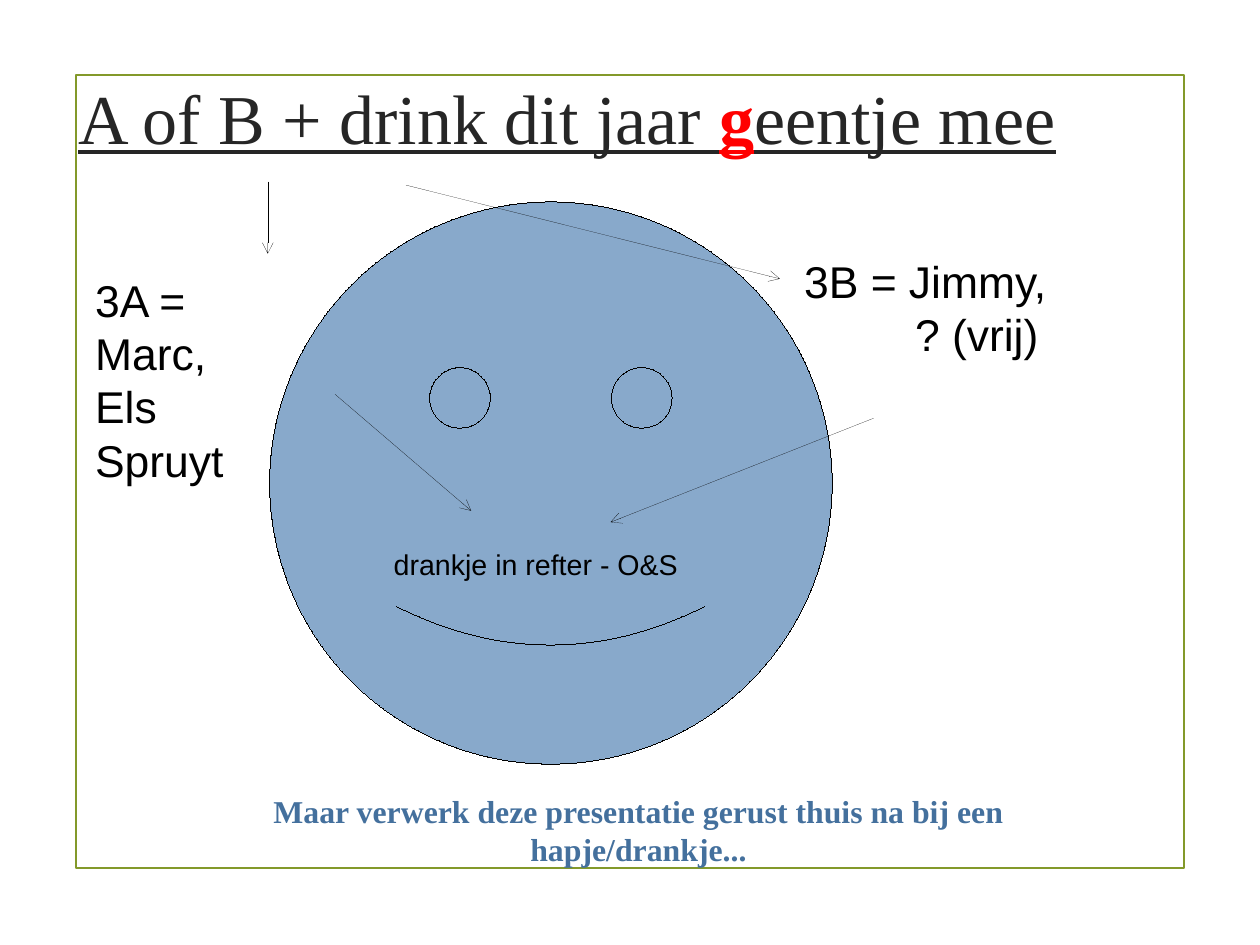
from dataclasses import dataclass

from lxml import etree
from pptx import Presentation
from pptx.dml.color import RGBColor
from pptx.enum.shapes import MSO_CONNECTOR, MSO_SHAPE
from pptx.enum.text import MSO_ANCHOR, MSO_AUTO_SIZE, PP_ALIGN
from pptx.oxml.ns import qn
from pptx.util import Cm, Pt

RECTANGLE, OVAL = MSO_SHAPE.RECTANGLE, MSO_SHAPE.OVAL
STRAIGHT = MSO_CONNECTOR.STRAIGHT
TOP, MIDDLE = MSO_ANCHOR.TOP, MSO_ANCHOR.MIDDLE
LEFT, CENTER = PP_ALIGN.LEFT, PP_ALIGN.CENTER
NO_AUTOSIZE = MSO_AUTO_SIZE.NONE

WIDTH, HEIGHT = Cm(28), Cm(21)
TITLE_ONLY = 5
BLACK, FACE_BLUE, OLIVE = "000000", "88A9CB", "83992A"
SERIF, SANS = "Times New Roman", "Arial"
SMILE_STEPS = 40


@dataclass(frozen=True)
class Box:
    left: float
    top: float
    width: float
    height: float


@dataclass(frozen=True)
class Outline:
    box: Box
    preset: int
    fill: str | None
    line: str
    weight: float = 0


@dataclass(frozen=True)
class Label:
    box: Box
    paragraphs: tuple[tuple[str, ...], ...]
    size: float
    font: str = SANS
    color: str = BLACK
    bold: bool = False
    align: int = LEFT
    hanging: float = 0


@dataclass(frozen=True)
class Arrow:
    x1: float
    y1: float
    x2: float
    y2: float


OUTLINES = (
    Outline(Box(6.04, 7.9, 87.93, 83.92), RECTANGLE, None, OLIVE, 1.25),
    Outline(Box(21.4, 21.37, 44.65, 59.49), OVAL, FACE_BLUE, BLACK),
    *(Outline(Box(x, 38.9, 4.81, 6.41), OVAL, None, BLACK) for x in (34.1, 48.53)),
)
SMILE = Box(31.45, 64.15, 24.5, 4.11)
TITLE_BOX = Box(0, 3.99, 90.02, 16.69)
TITLE_RUNS = (
    ("A of B + drink dit jaar ", "262626", False),
    ("g", "FF0000", True),
    ("eentje mee", "262626", False),
)
LABELS = (
    Label(
        Box(62.93, 26.3, 26.41, 17.53), (("3B = Jimmy,", "? (vrij)"),), 28, hanging=8.8
    ),
    Label(Box(6.66, 28.26, 17.24, 23.1), (("3A = Marc,",), ("Els Spruyt",)), 28),
    Label(Box(30.35, 57.25, 28.49, 4.72), (("drankje in refter - O&S",),), 18),
    Label(
        Box(12.57, 83.19, 76.23, 5.32),
        (("Maar verwerk deze presentatie gerust thuis na bij een hapje/drankje...",),),
        20, SERIF, "44709D", True, CENTER,
    ),
)
ARROWS = (
    Arrow(21.25, 19.23, 21.25, 26.84),
    Arrow(32.21, 19.59, 61.89, 29.5),
    Arrow(26.59, 41.72, 37.39, 54.05),
    Arrow(69.33, 44.26, 48.46, 55.26),
)


def across(share: float) -> int:
    return round(WIDTH * share / 100)


def down(share: float) -> int:
    return round(HEIGHT * share / 100)


def place(box: Box) -> tuple[int, int, int, int]:
    return across(box.left), down(box.top), across(box.width), down(box.height)


def rgb(value: str) -> RGBColor:
    return RGBColor.from_string(value)


def set_all(target, values: dict) -> None:
    for name, value in values.items():
        setattr(target, name, value)


def add_run(p, text: str, color: str, **font) -> None:
    r = p.add_run()
    r.text = text
    set_all(r.font, font)
    r.font.color.rgb = rgb(color)


def style_line(sp, color: str, weight: float):
    sp.line.color.rgb = rgb(color)
    ln = sp._element.spPr.find(qn("a:ln"))
    ln.set("w", str(int(Pt(weight))))
    return ln


def style(sp, fill: str | None, line: str, weight: float) -> None:
    sp.shadow.inherit = False
    if fill:
        sp.fill.solid()
        sp.fill.fore_color.rgb = rgb(fill)
    else:
        sp.fill.background()
    style_line(sp, line, weight)


def draw_outline(s, outline: Outline) -> None:
    sp = s.shapes.add_shape(outline.preset, *place(outline.box))
    style(sp, outline.fill, outline.line, outline.weight)


def draw_smile(s, box: Box) -> None:
    left, top, width, depth = place(box)
    points = []
    for step in range(SMILE_STEPS + 1):
        t = step / SMILE_STEPS
        points.append((left + width * t, top + depth * 4 * t * (1 - t)))
    builder = s.shapes.build_freeform(*points[0])
    builder.add_line_segments(points[1:], close=False)
    style(builder.convert_to_shape(), None, BLACK, 0)


def draw_title(s) -> None:
    sp = s.shapes.title
    set_all(sp, dict(zip(("left", "top", "width", "height"), place(TITLE_BOX))))
    tf = sp.text_frame
    set_all(tf, {"vertical_anchor": MIDDLE, "auto_size": NO_AUTOSIZE, "word_wrap": True})
    p = tf.paragraphs[0]
    p.alignment = CENTER
    for text, color, bold in TITLE_RUNS:
        add_run(p, text, color, size=Pt(44.1), name=SERIF, bold=bold, underline=True)


def draw_label(s, label: Label) -> None:
    tf = s.shapes.add_textbox(*place(label.box)).text_frame
    set_all(tf, {"word_wrap": True, "auto_size": NO_AUTOSIZE, "vertical_anchor": TOP})
    font = {"size": Pt(label.size), "name": label.font, "bold": label.bold}
    for i, lines in enumerate(label.paragraphs):
        p = tf.add_paragraph() if i else tf.paragraphs[0]
        p.alignment = label.align
        if label.hanging:
            pPr = p._p.get_or_add_pPr()
            pPr.set("marL", str(across(label.hanging)))
            pPr.set("indent", str(-across(label.hanging)))
        for j, text in enumerate(lines):
            if j:
                p.add_line_break()
            add_run(p, text, label.color, **font)


def draw_arrow(s, arrow: Arrow) -> None:
    line = s.shapes.add_connector(
        STRAIGHT, across(arrow.x1), down(arrow.y1), across(arrow.x2), down(arrow.y2)
    )
    ln = style_line(line, BLACK, 0)
    etree.SubElement(ln, qn("a:tailEnd"), type="arrow")
    etree.SubElement(line._element.spPr, qn("a:effectLst"))


def main() -> None:
    prs = Presentation()
    prs.slide_width = WIDTH
    prs.slide_height = HEIGHT
    s = prs.slides.add_slide(prs.slide_layouts[TITLE_ONLY])
    for outline in OUTLINES:
        draw_outline(s, outline)
    draw_smile(s, SMILE)
    draw_title(s)
    for arrow in ARROWS:
        draw_arrow(s, arrow)
    for label in LABELS:
        draw_label(s, label)
    prs.save("out.pptx")


if __name__ == "__main__":
    main()
